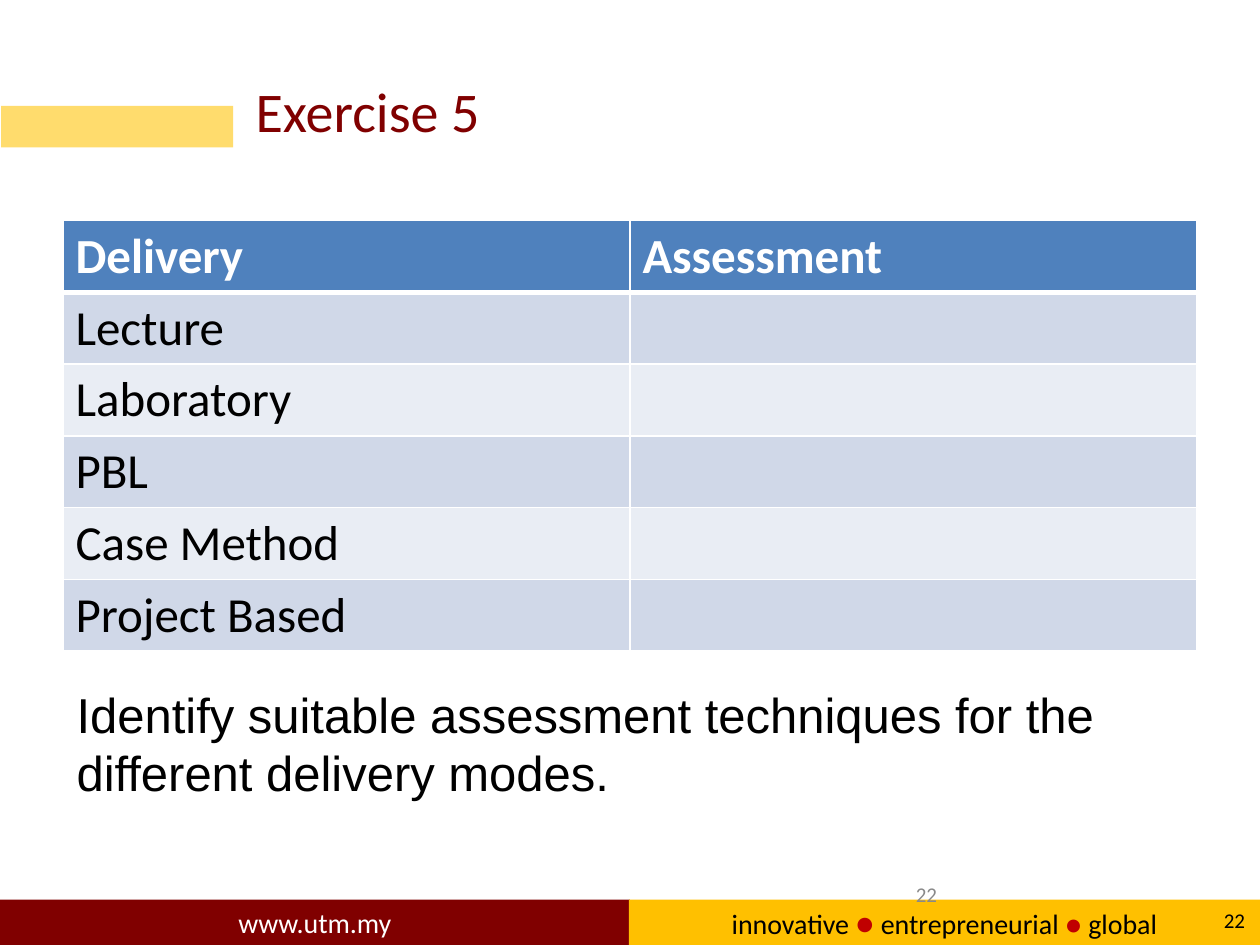
from lxml.etree import SubElement
from pptx import Presentation
from pptx.dml.color import RGBColor
from pptx.enum.shapes import MSO_SHAPE
from pptx.enum.text import MSO_ANCHOR, PP_ALIGN
from pptx.oxml.ns import qn
from pptx.util import Inches, Pt

MAROON = RGBColor(0x80, 0x00, 0x00)
GOLD = RGBColor(0xFF, 0xC0, 0x00)
PALE_GOLD = RGBColor(0xFF, 0xDC, 0x6D)
RED = RGBColor(0xC0, 0x00, 0x00)
BLUE = RGBColor(0x4F, 0x81, 0xBD)
BANDS = [RGBColor(0xD0, 0xD8, 0xE8), RGBColor(0xE9, 0xED, 0xF4)]
WHITE = RGBColor(0xFF, 0xFF, 0xFF)
BLACK = RGBColor(0x00, 0x00, 0x00)
GRAY = RGBColor(0x89, 0x89, 0x89)

TITLE = "Exercise 5"
HEADERS = ["Delivery", "Assessment"]
DELIVERY_MODES = ["Lecture", "Laboratory", "PBL", "Case Method", "Project Based"]
TASK = "Identify suitable assessment techniques for the different delivery modes."
PAGE = "22"
WEBSITE = [("www.utm.my", 16, WHITE)]
MOTTO = [
    ("innovative ", 16, BLACK),
    ("●", 18, RED),
    (" entrepreneurial ", 16, BLACK),
    ("● ", 16, RED),
    ("global", 16, BLACK),
]
COLUMN_WIDTH, ROW_HEIGHT = 4.5, 0.57


def style(paragraph, size, color, name="Calibri", bold=False):
    font = paragraph.font
    font.name, font.size, font.bold = name, Pt(size), bold
    font.color.rgb = color


def add_bar(slide, box, color, runs=()):
    bar = slide.shapes.add_shape(MSO_SHAPE.RECTANGLE, *map(Inches, box))
    bar.shadow.inherit = False
    bar.fill.solid()
    bar.fill.fore_color.rgb = color
    bar.line.fill.background()
    bar.text_frame.vertical_anchor = MSO_ANCHOR.MIDDLE
    paragraph = bar.text_frame.paragraphs[0]
    paragraph.alignment = PP_ALIGN.CENTER
    for text, size, run_color in runs:
        run = paragraph.add_run()
        run.text = text
        style(run, size, run_color)


def add_text(slide, box, text, size, color, name="Calibri",
             align=PP_ALIGN.LEFT, anchor=MSO_ANCHOR.TOP):
    frame = slide.shapes.add_textbox(*map(Inches, box)).text_frame
    frame.word_wrap = True
    frame.vertical_anchor = anchor
    paragraph = frame.paragraphs[0]
    paragraph.text = text
    paragraph.alignment = align
    style(paragraph, size, color, name)


def set_borders(cell, widths):
    properties = cell._tc.get_or_add_tcPr()
    for position, (side, width) in enumerate(widths.items()):
        line = properties.makeelement(qn(f"a:ln{side}"), {"w": str(Pt(width))})
        fill = SubElement(line, qn("a:solidFill"))
        SubElement(fill, qn("a:srgbClr"), val=str(WHITE))
        properties.insert(position, line)


def add_delivery_table(slide):
    rows = [HEADERS] + [[mode, ""] for mode in DELIVERY_MODES]
    table = slide.shapes.add_table(
        len(rows), len(HEADERS), Inches(0.5), Inches(1.75),
        Inches(COLUMN_WIDTH * len(HEADERS)), Inches(ROW_HEIGHT * len(rows))).table
    for column in table.columns:
        column.width = Inches(COLUMN_WIDTH)
    for r, texts in enumerate(rows):
        table.rows[r].height = Inches(ROW_HEIGHT)
        header = r == 0
        for c, text in enumerate(texts):
            cell = table.cell(r, c)
            cell.fill.solid()
            cell.fill.fore_color.rgb = BLUE if header else BANDS[(r - 1) % 2]
            set_borders(cell, {"L": 1, "R": 1, "T": 3 if r == 1 else 1,
                               "B": 3 if header else 1})
            paragraph = cell.text_frame.paragraphs[0]
            paragraph.text = text
            style(paragraph, 28, WHITE if header else BLACK, bold=header)


def main():
    deck = Presentation()
    deck.slide_width, deck.slide_height = Inches(10), Inches(7.5)
    slide = deck.slides.add_slide(deck.slide_layouts[6])
    add_bar(slide, (0, 7.14, 5, 0.36), MAROON, WEBSITE)
    add_bar(slide, (4.99, 7.14, 5.01, 0.36), GOLD, MOTTO)
    add_text(slide, (9.33, 7.1, 0.65, 0.4), PAGE, 12, BLACK,
             align=PP_ALIGN.RIGHT, anchor=MSO_ANCHOR.MIDDLE)
    add_bar(slide, (0.01, 0.84, 1.84, 0.33), PALE_GOLD)
    add_text(slide, (1.93, 0.52, 7.41, 0.71), TITLE, 32, MAROON,
             anchor=MSO_ANCHOR.MIDDLE)
    add_delivery_table(slide)
    add_text(slide, (0.51, 5.38, 8.9, 1.04), TASK, 28, BLACK, "Arial")
    add_text(slide, (7.17, 6.95, 2.33, 0.4), PAGE, 12, GRAY)
    deck.save("out.pptx")


if __name__ == "__main__":
    main()
